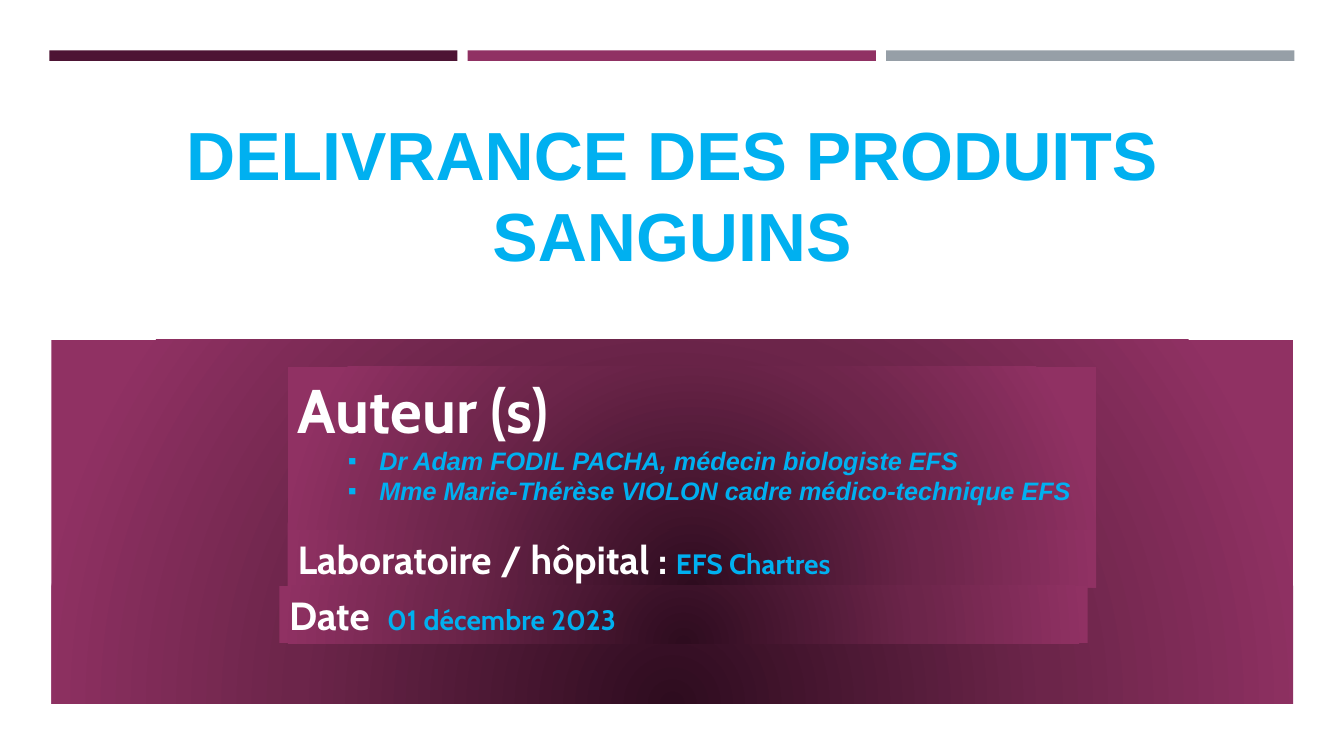
"""Build the title slide of a talk on the issue of blood products."""
from lxml.etree import SubElement
from pptx import Presentation
from pptx.dml.color import RGBColor
from pptx.enum.shapes import MSO_SHAPE
from pptx.enum.text import MSO_ANCHOR, PP_ALIGN
from pptx.oxml import parse_xml
from pptx.oxml.ns import nsdecls, qn
from pptx.util import Pt

PLUM = RGBColor(0x4D, 0x14, 0x34)
MAGENTA = RGBColor(0x90, 0x31, 0x63)
GREY = RGBColor(0x96, 0x9F, 0xA7)
BLUE = RGBColor(0x00, 0xB0, 0xF0)
WHITE = RGBColor(0xFF, 0xFF, 0xFF)
DARK = RGBColor(0x2E, 0x0C, 0x1F)
MID = RGBColor(0x6C, 0x25, 0x4A)
GRADIENT = [(0, DARK), (58, MID), (100, MAGENTA)]


def add_panel(left, top, width, height):
    sp = s.shapes.add_shape(MSO_SHAPE.RECTANGLE, Pt(left), Pt(top), Pt(width), Pt(height))
    sp.shadow.inherit = False
    sp.line.fill.background()
    stops = "".join(f'<a:gs pos="{pos * 1000}"><a:srgbClr val="{color}"/></a:gs>'
                    for pos, color in GRADIENT)
    grad = parse_xml(
        f'<a:gradFill {nsdecls("a")} rotWithShape="1"><a:gsLst>{stops}</a:gsLst>'
        '<a:path path="circle"><a:fillToRect l="50000" t="130000" r="50000" b="-30000"/>'
        '</a:path></a:gradFill>')
    sp._element.spPr.find(qn("a:prstGeom")).addnext(grad)
    tf = sp.text_frame
    tf.word_wrap = True
    tf.vertical_anchor = MSO_ANCHOR.TOP
    tf.paragraphs[0].alignment = PP_ALIGN.LEFT
    return tf


def add_run(p, text, size, color, name="Cabin"):
    r = p.add_run()
    r.text = text
    r.font.size = Pt(size)
    r.font.name = name
    r.font.bold = True
    r.font.color.rgb = color
    return r


prs = Presentation()
prs.slide_width, prs.slide_height = Pt(960), Pt(540)
s = prs.slides.add_slide(prs.slide_layouts[6])

for i, color in enumerate([PLUM, MAGENTA, GREY]):
    bar = s.shapes.add_shape(MSO_SHAPE.RECTANGLE, Pt(35.2 + 298.9 * i), Pt(36), Pt(291.6), Pt(7.5))
    bar.shadow.inherit = False
    bar.fill.solid()
    bar.fill.fore_color.rgb = color
    bar.line.fill.background()

add_panel(36.7, 242.8, 887, 260)

title = s.shapes.add_textbox(Pt(47.5), Pt(80.6), Pt(865), Pt(116))
tf = title.text_frame
tf.word_wrap = True
tf.vertical_anchor = MSO_ANCHOR.MIDDLE
p = tf.paragraphs[0]
p.alignment = PP_ALIGN.CENTER
p.line_spacing = Pt(58)
add_run(p, "DELIVRANCE DES PRODUITS SANGUINS", 48.6, BLUE, "Arial")

tf = add_panel(205.5, 262, 577.4, 157.7)
add_run(tf.paragraphs[0], "Auteur (s)", 44, WHITE)
for author in ["Dr Adam FODIL PACHA, médecin biologiste EFS",
               "Mme Marie-Thérèse VIOLON cadre médico-technique EFS"]:
    p = tf.add_paragraph()
    p.alignment = PP_ALIGN.LEFT
    p.line_spacing = Pt(21.4)
    pPr = p._p.get_or_add_pPr()
    pPr.set("marL", str(Pt(58.3)))
    pPr.set("indent", str(Pt(-22.5)))
    SubElement(pPr, qn("a:buFont")).set("typeface", "Arial")
    SubElement(pPr, qn("a:buChar")).set("char", "▪")
    add_run(p, author, 18, BLUE, "Arial").font.italic = True

p = add_panel(205.5, 378.7, 577.4, 41).paragraphs[0]
add_run(p, "Laboratoire / hôpital : ", 28, WHITE)
add_run(p, "EFS Chartres", 20, BLUE)

p = add_panel(199.5, 418.5, 577.4, 41).paragraphs[0]
tab = SubElement(SubElement(p._p.get_or_add_pPr(), qn("a:tabLst")), qn("a:tab"))
tab.set("pos", str(Pt(70)))
tab.set("algn", "l")
add_run(p, "Date\t", 28, WHITE)
add_run(p, "01 décembre 2023", 20, BLUE)

prs.save("out.pptx")
